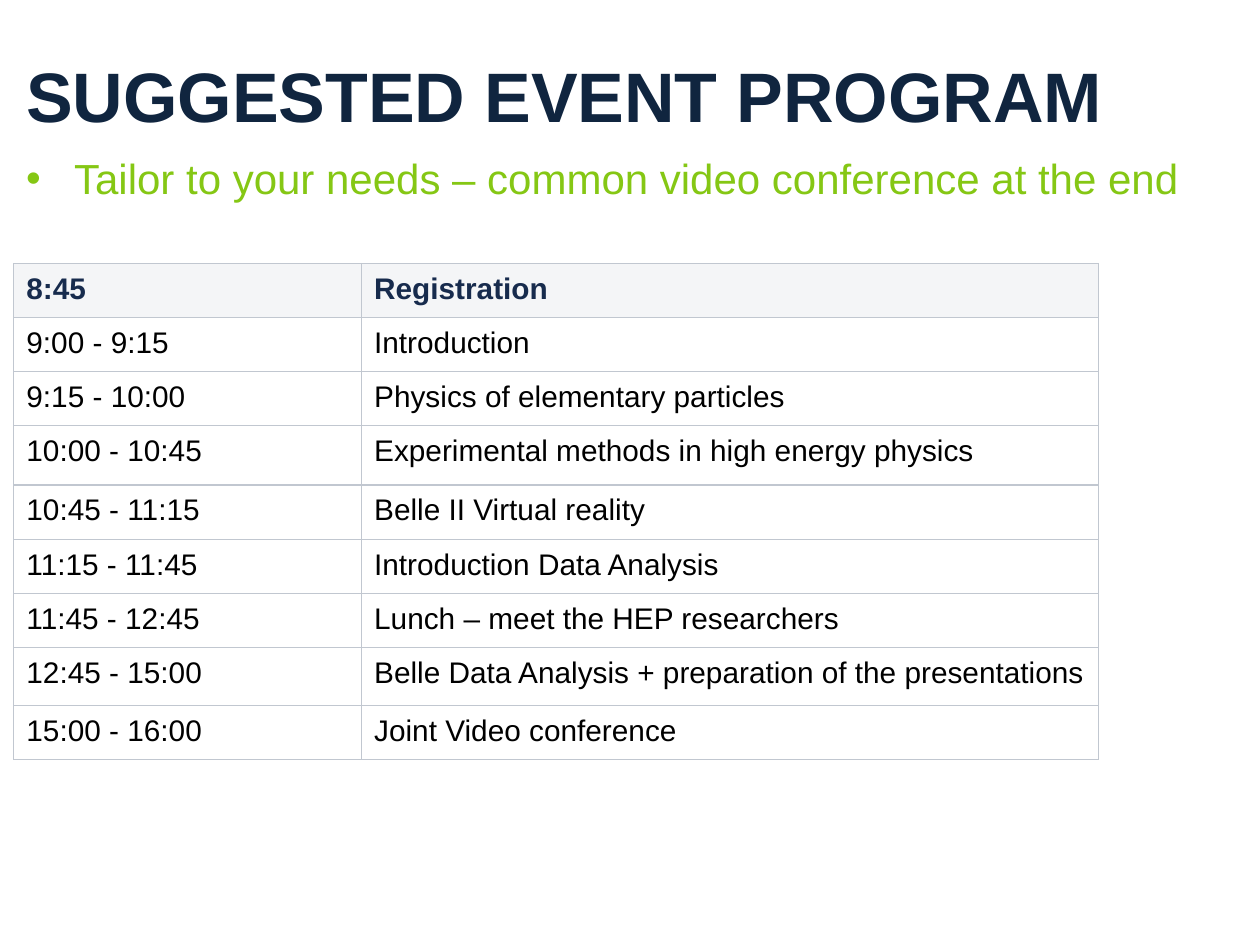
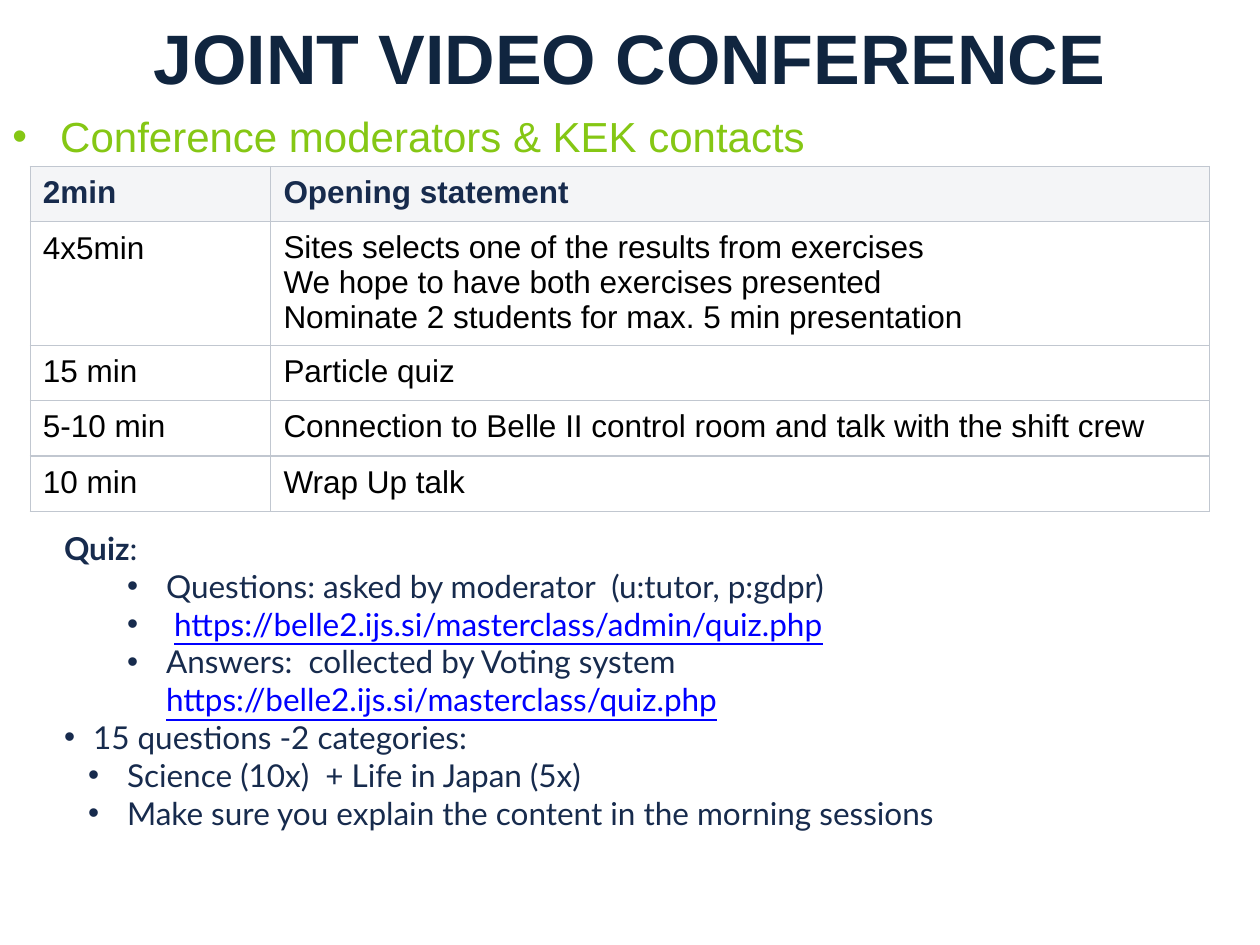
from pptx import Presentation
from pptx.dml.color import RGBColor
from pptx.oxml import parse_xml
from pptx.oxml.ns import nsdecls
from pptx.util import Inches, Pt

NAVY, GREEN, INK, BLACK, LINK = "10253F", "85C714", "172B4D", "000000", "0000FF"
HEADER_FILL, BORDER = "F4F5F7", "C1C7D0"

TITLE = dict(name="Arial", size=40, color=NAVY, bold=True)
SUBTITLE = dict(name="Arial", size=24, color=GREEN)
QUIZ = dict(name="Lato", size=18, color=INK)
QUIZ_LINK = dict(QUIZ, color=LINK, underline=True)

SLIDES = [
    dict(
        title=("SUGGESTED EVENT PROGRAM", (0.11, 0.3, 9.89, 0.8)),
        subtitle=("Tailor to your needs – common video conference at the end",
                  (0.11, 1.12, 10.05, 0.85)),
        table=dict(
            at=(0.11, 2.09), cols=(2.76, 5.85), size=17,
            row_height=0.43, tall_rows={3: 0.47, 7: 0.46},
            rows=[
                ("8:45", "Registration"),
                ("9:00 - 9:15", "Introduction"),
                ("9:15 - 10:00", "Physics of elementary particles"),
                ("10:00 - 10:45", "Experimental methods in high energy physics"),
                ("10:45 - 11:15", "Belle II Virtual reality"),
                ("11:15 - 11:45", "Introduction Data Analysis"),
                ("11:45 - 12:45", "Lunch – meet the HEP researchers"),
                ("12:45 - 15:00", "Belle Data Analysis + preparation of the presentations"),
                ("15:00 - 16:00", "Joint Video conference"),
            ]),
    ),
    dict(
        title=("JOINT VIDEO CONFERENCE", (1.12, 0, 8.5, 0.95)),
        subtitle=("Conference moderators & KEK contacts", (0, 0.79, 7.9, 0.5)),
        table=dict(
            at=(0.24, 1.32), cols=(1.91, 7.45), size=18,
            row_height=0.42, tall_rows={1: 0.98},
            rows=[
                ("2min", "Opening statement"),
                ("4x5min", "Sites selects one of the results from exercises\n"
                           "We hope to have both exercises presented\n"
                           "Nominate 2 students for max. 5 min presentation"),
                ("15 min", "Particle quiz"),
                ("5-10 min", "Connection to Belle II control room and talk with the shift crew"),
                ("10 min", "Wrap Up talk"),
            ]),
        quiz=dict(
            at=(0.41, 4.15, 9.35, 3.13),
            lines=[
                (None, [("Quiz", dict(QUIZ, bold=True)), (":", QUIZ)]),
                ((0.81, 0.31), [("Questions: asked by moderator  (u:tutor, p:gdpr)", QUIZ)]),
                ((0.81, 0.31), [(" ", QUIZ),
                                ("https://belle2.ijs.si/masterclass/admin/quiz.php", QUIZ_LINK)]),
                ((0.81, 0.31), [("Answers:  collected by Voting system ", QUIZ),
                                ("https://belle2.ijs.si/masterclass/quiz.php", QUIZ_LINK)]),
                ((0.23, 0.23), [("15 questions -2 categories:", QUIZ)]),
                ((0.5, 0.31), [("Science (10x)  + Life in Japan (5x)", QUIZ)]),
                ((0.5, 0.31), [("Make sure you explain the content in the morning sessions", QUIZ)]),
            ]),
    ),
]


def rgb(value):
    return RGBColor.from_string(value)


def style(font, fmt):
    for key, value in fmt.items():
        if key == "color":
            font.color.rgb = rgb(value)
        else:
            setattr(font, key, Pt(value) if key == "size" else value)


def add_bullet(p, left, hang):
    pPr = p._p.get_or_add_pPr()
    pPr.set("marL", str(Inches(left)))
    pPr.set("indent", str(-Inches(hang)))
    pPr.append(parse_xml(f'<a:buFont {nsdecls("a")} typeface="Arial"/>'))
    pPr.append(parse_xml(f'<a:buChar {nsdecls("a")} char="•"/>'))


def add_text(s, at, lines, spacing=None):
    tf = s.shapes.add_textbox(*map(Inches, at)).text_frame
    tf.word_wrap = True
    for i, (bullet, runs) in enumerate(lines):
        p = tf.add_paragraph() if i else tf.paragraphs[0]
        if spacing:
            p.line_spacing = spacing
        if bullet:
            add_bullet(p, *bullet)
        for text, fmt in runs:
            r = p.add_run()
            r.text = text
            style(r.font, fmt)


def add_borders(cell):
    tcPr = cell._tc.get_or_add_tcPr()
    for side in "LRTB":
        tcPr.append(parse_xml(
            f'<a:ln{side} {nsdecls("a")} w="{Pt(0.75)}"><a:solidFill>'
            f'<a:srgbClr val="{BORDER}"/></a:solidFill></a:ln{side}>'))


def fill_cell(cell, text, size, header):
    margins = dict(left=0.1, top=0.07, right=0.15 if header else 0.1, bottom=0.07)
    for side, value in margins.items():
        setattr(cell, f"margin_{side}", Inches(value))
    add_borders(cell)
    if header:
        cell.fill.solid()
        cell.fill.fore_color.rgb = rgb(HEADER_FILL)
    else:
        cell.fill.background()
    cell.text_frame.text = text
    fmt = dict(name="Arial", size=size, color=INK if header else BLACK, bold=header)
    for p in cell.text_frame.paragraphs:
        if "\n" in text:
            p.line_spacing = Pt(20)
        for r in p.runs:
            style(r.font, fmt)


def add_schedule(s, at, cols, size, row_height, tall_rows, rows):
    heights = [tall_rows.get(i, row_height) for i in range(len(rows))]
    frame = s.shapes.add_table(len(rows), len(cols), *map(Inches, (*at, sum(cols), sum(heights))))
    table = frame.table
    table.horz_banding = False
    for column, width in zip(table.columns, cols):
        column.width = Inches(width)
    for i, (row, height, texts) in enumerate(zip(table.rows, heights, rows)):
        row.height = Inches(height)
        for cell, text in zip(row.cells, texts):
            fill_cell(cell, text, size, header=i == 0)


def main():
    prs = Presentation()
    prs.slide_width, prs.slide_height = Inches(10), Inches(7.5)
    for content in SLIDES:
        s = prs.slides.add_slide(prs.slide_layouts[6])
        title, title_at = content["title"]
        subtitle, subtitle_at = content["subtitle"]
        add_text(s, title_at, [(None, [(title, TITLE)])], spacing=1.1)
        add_text(s, subtitle_at, [((0.38, 0.38), [(subtitle, SUBTITLE)])], spacing=1.1)
        add_schedule(s, **content["table"])
        if "quiz" in content:
            add_text(s, **content["quiz"])
    prs.save("out.pptx")


if __name__ == "__main__":
    main()
